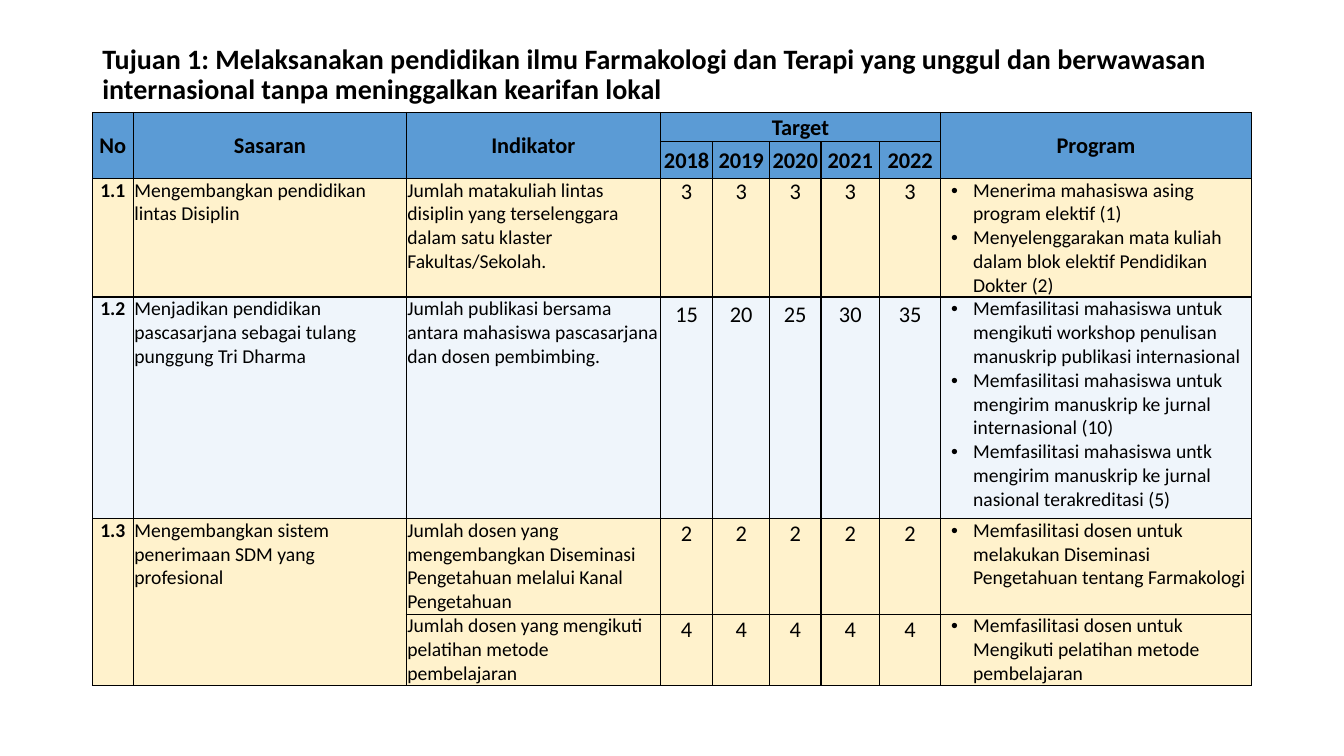
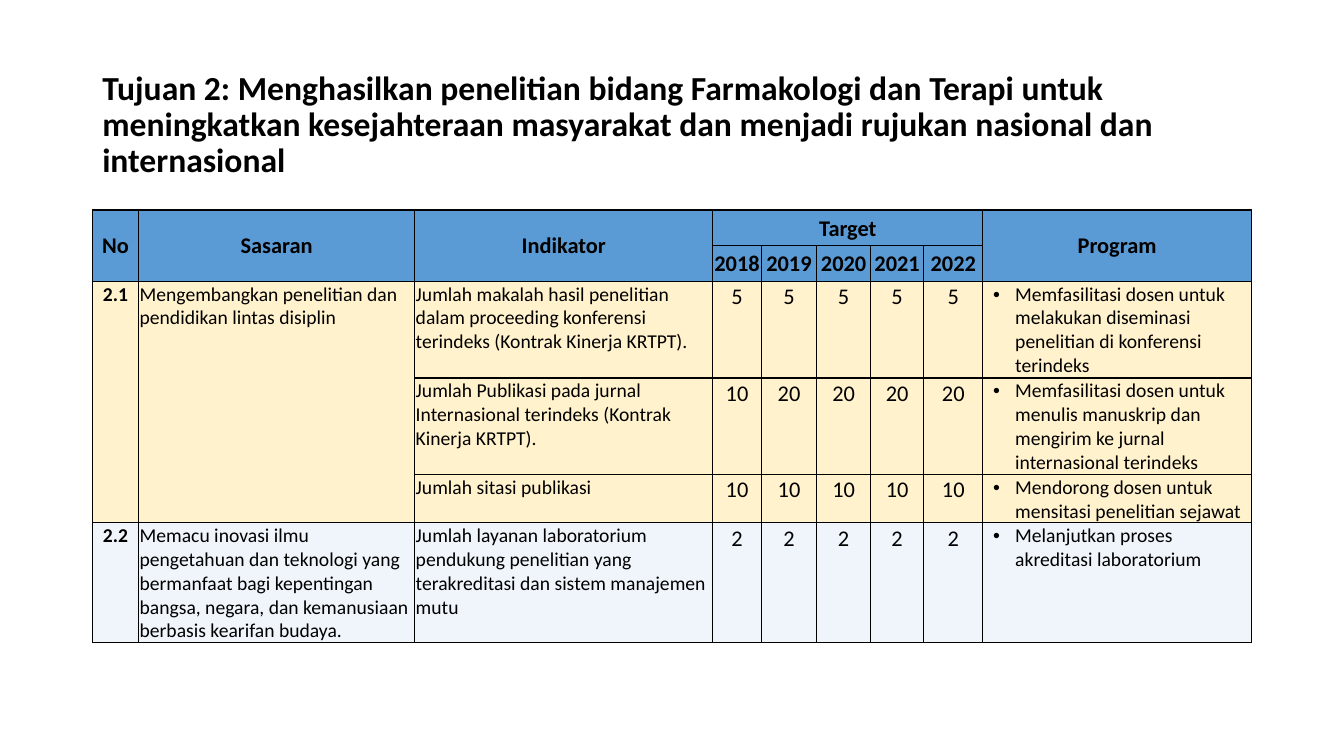
from pptx import Presentation
from pptx.dml.color import RGBColor
from pptx.enum.text import MSO_ANCHOR as ANC, PP_ALIGN as AL
from pptx.oxml.ns import qn
from pptx.util import Pt
from lxml.etree import SubElement as Sub

PX = 9525  # EMU in one px, 96 px to the inch
BLACK = RGBColor(0x00, 0x00, 0x00)
BLUE = RGBColor(0x5B, 0x9B, 0xD5)
CREAM = RGBColor(0xFF, 0xF2, 0xCC)
PALE = RGBColor(0xEF, 0xF5, 0xFB)
FONT = "Calibri"
LEFT, WIDE = 88, 1104
YEARS = ["2018", "2019", "2020", "2021", "2022"]
HEAD = [
    ["No", "Sasaran", "Indikator", "Target", "", "", "", "", "Program"],
    ["", "", "", *YEARS, ""],
]


def style(par, size, bold=False, align=AL.LEFT):
    par.alignment = align
    font = par.font
    font.name, font.size, font.bold = FONT, Pt(size), bold
    font.color.rgb = BLACK


def put(cell, lines, fill, size, bold=False, align=AL.LEFT, side=1, top=0,
        anchor=ANC.TOP, space=None, after=0, bullet=False):
    cell.margin_left = cell.margin_right = side * PX
    cell.margin_top, cell.margin_bottom = top * PX, 0
    cell.vertical_anchor = anchor
    # Thin black line on all four sides
    prop = cell._tc.get_or_add_tcPr()
    for tag in ("a:lnL", "a:lnR", "a:lnT", "a:lnB"):
        line = Sub(prop, qn(tag), w=str(Pt(1)))
        Sub(Sub(line, qn("a:solidFill")), qn("a:srgbClr"), val=str(BLACK))
    cell.fill.solid()
    cell.fill.fore_color.rgb = fill
    cell.text = "\n".join(lines)
    for par in cell.text_frame.paragraphs:
        if bullet:
            ppr = par._p.get_or_add_pPr()
            ppr.set("marL", str(30 * PX))
            ppr.set("indent", str(-21 * PX))
            Sub(ppr, qn("a:buFont"), typeface="Arial")
            Sub(ppr, qn("a:buChar"), char="•")
        if space:
            par.line_spacing = space
            par.space_after = Pt(after)
        style(par, size, bold, align)


# Rows: number, goal, indicator, targets, line spacing and space after, programs
# A row without a number continues the goal above it
TIGHT, LOOSE, AIRY = (1.0, 0), (1.15, 0), (1.07, 8)
PAGES = [
    dict(
        title="Tujuan 1: Melaksanakan pendidikan ilmu Farmakologi dan Terapi yang "
              "unggul dan berwawasan internasional tanpa meninggalkan kearifan lokal",
        size=20, box=(38, 68), y=107, top=0,
        cols=[39, 260, 242, 50, 54, 49, 56, 58, 296],
        high=[28, 35, 113, 211, 91, 68],
        rows=[
            ("1.1", "Mengembangkan pendidikan lintas Disiplin",
             "Jumlah matakuliah lintas disiplin yang terselenggara dalam satu "
             "klaster Fakultas/Sekolah.",
             [3] * 5, TIGHT,
             ["Menerima mahasiswa asing program elektif (1)",
              "Menyelenggarakan mata kuliah dalam blok elektif Pendidikan Dokter (2)"]),
            ("1.2", "Menjadikan pendidikan pascasarjana sebagai tulang punggung Tri Dharma",
             "Jumlah publikasi bersama antara mahasiswa pascasarjana dan dosen pembimbing.",
             [15, 20, 25, 30, 35], LOOSE,
             ["Memfasilitasi mahasiswa untuk mengikuti workshop penulisan "
              "manuskrip publikasi internasional",
              "Memfasilitasi mahasiswa untuk mengirim manuskrip ke jurnal "
              "internasional (10)",
              "Memfasilitasi mahasiswa untk mengirim manuskrip ke jurnal "
              "nasional terakreditasi (5)"]),
            ("1.3", "Mengembangkan sistem penerimaan SDM yang profesional",
             "Jumlah dosen yang mengembangkan Diseminasi Pengetahuan melalui "
             "Kanal Pengetahuan",
             [2] * 5, AIRY,
             ["Memfasilitasi dosen untuk melakukan Diseminasi Pengetahuan "
              "tentang Farmakologi"]),
            ("", "", "Jumlah dosen yang mengikuti pelatihan metode pembelajaran",
             [4] * 5, AIRY,
             ["Memfasilitasi dosen untuk Mengikuti pelatihan metode pembelajaran"]),
        ],
    ),
    dict(
        title="Tujuan 2: Menghasilkan penelitian bidang Farmakologi dan Terapi untuk "
              "meningkatkan kesejahteraan masyarakat dan menjadi rujukan nasional "
              "dan internasional",
        size=24, box=(60, 119), y=200, top=1,
        cols=[44, 263, 284, 46, 53, 51, 51, 56, 256],
        high=[34, 34, 92, 92, 46, 114],
        rows=[
            ("2.1", "Mengembangkan penelitian dan pendidikan lintas disiplin",
             "Jumlah makalah hasil penelitian dalam proceeding konferensi "
             "terindeks (Kontrak Kinerja KRTPT).",
             [5] * 5, AIRY,
             ["Memfasilitasi dosen untuk melakukan diseminasi penelitian di "
              "konferensi terindeks"]),
            ("", "", "Jumlah Publikasi pada jurnal Internasional terindeks "
             "(Kontrak Kinerja KRTPT).",
             [10, 20, 20, 20, 20], AIRY,
             ["Memfasilitasi dosen untuk menulis manuskrip dan mengirim ke "
              "jurnal internasional terindeks"]),
            ("", "", "Jumlah sitasi publikasi", [10] * 5, AIRY,
             ["Mendorong dosen untuk mensitasi penelitian sejawat"]),
            ("2.2", "Memacu inovasi ilmu pengetahuan dan teknologi yang bermanfaat "
             "bagi kepentingan bangsa, negara, dan kemanusiaan berbasis kearifan budaya.",
             "Jumlah layanan laboratorium pendukung penelitian yang "
             "terakreditasi dan sistem manajemen mutu",
             [2] * 5, AIRY,
             ["Melanjutkan proses akreditasi laboratorium"]),
        ],
    ),
]

deck = Presentation()
deck.slide_width, deck.slide_height = 1280 * PX, 720 * PX

for page in PAGES:
    slide = deck.slides.add_slide(deck.slide_layouts[6])

    # Title
    y, tall = page["box"]
    frame = slide.shapes.add_textbox(LEFT * PX, y * PX, WIDE * PX, tall * PX).text_frame
    frame.word_wrap = True
    frame.vertical_anchor = ANC.MIDDLE
    frame.text = page["title"]
    par = frame.paragraphs[0]
    par.line_spacing = 0.9
    style(par, page["size"], bold=True)

    # Table grid
    cols, high, rows, top = page["cols"], page["high"], page["rows"], page["top"]
    table = slide.shapes.add_table(len(high), len(cols), LEFT * PX, page["y"] * PX,
                                   WIDE * PX, sum(high) * PX).table
    table.first_row = table.horz_banding = False
    for col, wide in zip(table.columns, cols):
        col.width = wide * PX
    for row, tall in zip(table.rows, high):
        row.height = tall * PX

    # Header
    for r, names in enumerate(HEAD):
        for c, name in enumerate(names):
            put(table.cell(r, c), [name], BLUE, 16, True, AL.CENTER,
                top=1, anchor=ANC.MIDDLE)
    for c in (0, 1, 2, 8):
        table.cell(0, c).merge(table.cell(1, c))
    table.cell(0, 3).merge(table.cell(0, 7))

    # Body, one fill for each goal in turn
    fill = PALE
    starts = []
    for r, (num, goal, sign, marks, (space, after), plans) in enumerate(rows, 2):
        if num:
            fill = CREAM if fill == PALE else PALE
            starts.append(r)
        put(table.cell(r, 0), [num], fill, 14, True, AL.CENTER, top=top)
        put(table.cell(r, 1), [goal], fill, 14, top=top)
        put(table.cell(r, 2), [sign], fill, 14, top=top)
        for c, mark in enumerate(marks, 3):
            put(table.cell(r, c), [str(mark)], fill, 16, align=AL.CENTER,
                side=6, space=space, after=after)
        put(table.cell(r, 8), plans, fill, 14, top=top, bullet=True)

    # Join number and goal over the rows they cover
    for start, stop in zip(starts, starts[1:] + [len(high)]):
        if stop - start > 1:
            for c in (0, 1):
                table.cell(start, c).merge(table.cell(stop - 1, c))

deck.save("out.pptx")
